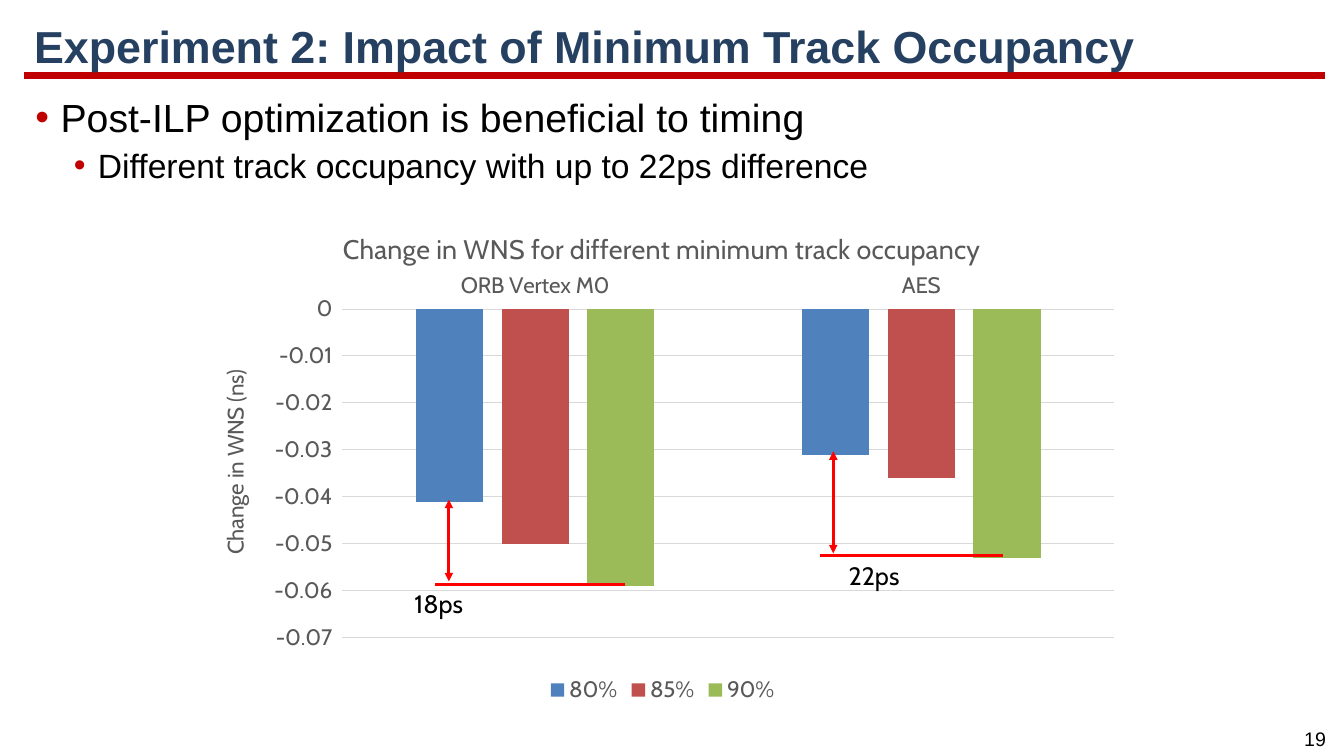
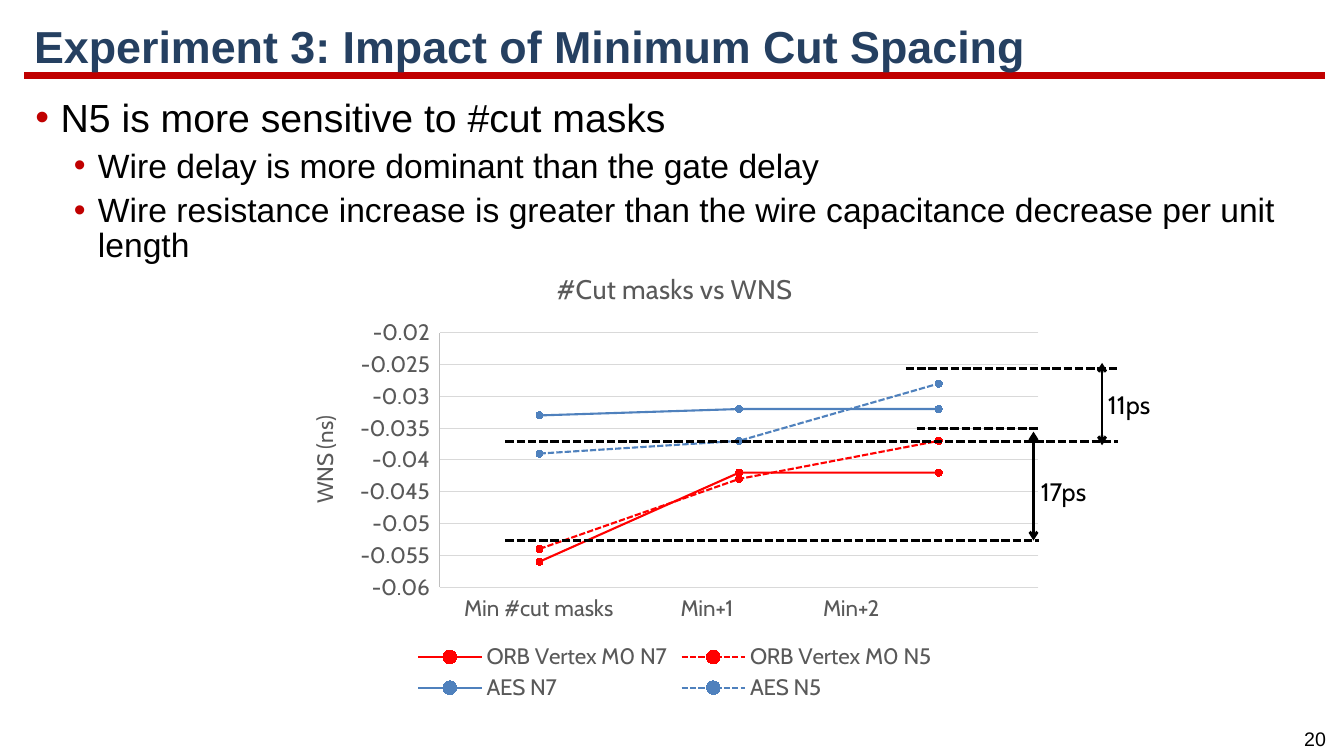
from lxml.etree import SubElement
from pptx import Presentation
from pptx.chart.data import CategoryChartData, XyChartData
from pptx.dml.color import RGBColor as RGB
from pptx.enum.chart import XL_CHART_TYPE as CT, XL_LEGEND_POSITION as LP
from pptx.enum.chart import XL_MARKER_STYLE as MS, XL_TICK_LABEL_POSITION as TL, XL_TICK_MARK as TM
from pptx.enum.dml import MSO_LINE
from pptx.enum.shapes import MSO_CONNECTOR
from pptx.enum.text import MSO_ANCHOR, PP_ALIGN
from pptx.oxml.ns import qn
from pptx.util import Inches, Pt

C = {"navy": "254061", "rule": "C00000", "ink": "000000", "grey": "595959", "grid": "D9D9D9",
     "axis": "BFBFBF", "blue": "4F81BD", "brick": "C0504D", "green": "9BBB59", "red": "FF0000"}
LEVELS = [(28, 0.25, 0.25), (24, 0.62, 0.24)]

prs = Presentation()
prs.slide_width, prs.slide_height = Inches(13.33), Inches(7.5)
COL, ROW = prs.slide_width / 100, prs.slide_height / 100


def text(s, items, x, y, w, h, size=18, font="Cabin", color="ink", bold=False,
         align=PP_ALIGN.LEFT, anchor=MSO_ANCHOR.TOP, spacing=1.0, wrap=True, bullets=False):
    tf = s.shapes.add_textbox(int(x * COL), int(y * ROW), int(w * COL), int(h * ROW)).text_frame
    tf.word_wrap, tf.vertical_anchor = wrap, anchor
    for i, (level, line) in enumerate(items):
        p = tf.paragraphs[0] if i == 0 else tf.add_paragraph()
        p.alignment, p.line_spacing = align, spacing
        if bullets:
            size, left, hang = LEVELS[level]
            p.level = level
            pPr = p._p.get_or_add_pPr()
            pPr.set("marL", str(Inches(left)))
            pPr.set("indent", str(-Inches(hang)))
            if i:
                p.space_before = Pt(size * 0.3)
            SubElement(SubElement(pPr, qn("a:buClr")), qn("a:srgbClr"), val=C["rule"])
            SubElement(pPr, qn("a:buFont"), typeface="Arial")
            SubElement(pPr, qn("a:buChar"), char="•")
        r = p.add_run()
        r.text = line
        r.font.size, r.font.name, r.font.bold = Pt(size), font, bold
        r.font.color.rgb = RGB.from_string(C[color])


def line(s, x1, y1, x2, y2, color="ink", width=2, dash=False, ends=None):
    ln = s.shapes.add_connector(MSO_CONNECTOR.STRAIGHT, int(x1 * COL), int(y1 * ROW),
                                int(x2 * COL), int(y2 * ROW))
    ln.line.color.rgb, ln.line.width = RGB.from_string(C[color]), Pt(width)
    if dash:
        ln.line.dash_style = MSO_LINE.SQUARE_DOT
    spPr = ln._element.spPr
    if ends:
        for tag in ("a:headEnd", "a:tailEnd"):
            SubElement(spPr.find(qn("a:ln")), qn(tag), type=ends)
    SubElement(spPr, qn("a:effectLst"))


occupancy = CategoryChartData(number_format="General")
occupancy.categories = ["ORB Vertex M0", "AES"]
for name, vals in [("80%", (-0.041, -0.031)), ("85%", (-0.05, -0.036)), ("90%", (-0.059, -0.053))]:
    occupancy.add_series(name, vals)

masks = XyChartData(number_format="General")
for name, vals in [("ORB Vertex M0 N7", (-0.056, -0.042, -0.042)),
                   ("ORB Vertex M0 N5", (-0.054, -0.043, -0.037)),
                   ("AES N7", (-0.033, -0.032, -0.032)),
                   ("AES N5", (-0.039, -0.037, -0.028))]:
    series = masks.add_series(name)
    for x, y in enumerate(vals, 1):
        series.add_data_point(x, y)

SLIDES = [
    dict(number=19, title="Experiment 2: Impact of Minimum Track Occupancy",
         body=[(0, "Post-ILP optimization is beneficial to timing"),
               (1, "Different track occupancy with up to 22ps difference")],
         kind=CT.COLUMN_CLUSTERED, data=occupancy, at=(14.25, 27.7, 70.07, 65.9),
         heading="Change in WNS for different minimum track occupancy", unit="Change in WNS (ns)",
         scale=(-0.07, 0, 0.01), plot=(0.16, 0.2, 0.82, 0.66), colors=["blue", "brick", "green"],
         rules=[(61, 73.5, 74.6, 73.5), (32.4, 77.3, 46.5, 77.3)],
         arrows=[(33.4, 66.1, 33.4, 76.9), (62, 59.7, 62, 73.2)],
         accent="red", dash=False, ends="triangle",
         labels=[("18ps", 30.1, 77.2, 18, "ink"), ("22ps", 62.4, 73.5, 18, "ink")]),
    dict(number=20, title="Experiment 3: Impact of Minimum Cut Spacing",
         body=[(0, "N5 is more sensitive to #cut masks"),
               (1, "Wire delay is more dominant than the gate delay"),
               (1, "Wire resistance increase is greater than the wire capacitance "
                   "decrease per unit length")],
         kind=CT.XY_SCATTER_LINES, data=masks, at=(22, 33.2, 56.4, 60.1),
         heading="#Cut masks vs WNS", unit="WNS (ns)",
         scale=(-0.06, -0.02, 0.005), plot=(0.19, 0.18, 0.79, 0.56),
         colors=["red", "red", "blue", "blue"],
         rules=[(37.6, 71.5, 77.3, 71.5), (68.2, 56.7, 77.3, 56.7),
                (37.6, 58.4, 83.2, 58.4), (67.4, 48.7, 83.2, 48.7)],
         arrows=[(76.9, 71.5, 76.9, 57.1), (82, 58.9, 82, 48)],
         accent="ink", dash=True, ends="arrow",
         labels=[("17ps", 76.7, 62.3, 18, "ink"), ("11ps", 81.7, 50.8, 18, "ink"),
                 ("Min #cut masks", 33.8, 77.9, 16, "grey"), ("Min+1", 49.9, 77.9, 16, "grey"),
                 ("Min+2", 60.5, 77.9, 16, "grey")]),
]

for d in SLIDES:
    s = prs.slides.add_slide(prs.slide_layouts[6])
    line(s, 1.8, 10, 98.6, 10, color="rule", width=4.5)
    text(s, [(0, str(d["number"]))], 96.2, 95.5, 3.3, 4.5, size=14, font="Arial",
         align=PP_ALIGN.CENTER, wrap=False)
    text(s, d["body"], 1.9, 12.7, 96.6, 80.7, font="Arial", spacing=0.85, bullets=True)
    text(s, [(0, d["title"])], 1.8, 2.1, 96.8, 8.7, size=32, font="Arial", color="navy",
         bold=True, anchor=MSO_ANCHOR.MIDDLE, spacing=0.9)

    x, y, w, h = d["at"]
    ch = s.shapes.add_chart(d["kind"], int(x * COL), int(y * ROW), int(w * COL), int(h * ROW),
                            d["data"]).chart
    ch.font.size, ch.font.name = Pt(16), "Cabin"
    ch.font.color.rgb = RGB.from_string(C["grey"])
    ch.has_legend = True
    ch.legend.position, ch.legend.include_in_layout = LP.BOTTOM, False
    cat, val = ch.category_axis, ch.value_axis
    val.minimum_scale, val.maximum_scale, val.major_unit = d["scale"]
    val.tick_label_position = TL.LOW
    val.tick_labels.number_format, val.tick_labels.number_format_is_linked = "General", False
    val.has_major_gridlines, cat.has_major_gridlines = True, False
    val.major_gridlines.format.line.color.rgb = RGB.from_string(C["grid"])
    val.major_gridlines.format.line.width = Pt(0.75)
    for axis in (cat, val):
        axis.major_tick_mark = axis.minor_tick_mark = TM.NONE
    for owner, words, size in [(ch, d["heading"], 19.2), (val, d["unit"], 16)]:
        tf = (owner.chart_title if owner is ch else owner.axis_title).text_frame
        tf.text = words
        f = tf.paragraphs[0].runs[0].font
        f.size, f.name, f.bold = Pt(size), "Cabin", False
        f.color.rgb = RGB.from_string(C["grey"])

    area = ch._chartSpace.chart.plotArea
    for old in area.findall(qn("c:layout")):
        area.remove(old)
    layout = SubElement(area, qn("c:layout"))
    area.insert(0, layout)
    manual = SubElement(layout, qn("c:manualLayout"))
    keys = ("layoutTarget", "xMode", "yMode", "x", "y", "w", "h")
    for key, v in zip(keys, ("inner", "edge", "edge", *d["plot"])):
        SubElement(manual, qn("c:" + key), val=str(v))

    plot = ch.plots[0]
    plot.vary_by_categories = False
    if d["kind"] == CT.COLUMN_CLUSTERED:
        plot.gap_width, plot.overlap = 219, -27
        cat.tick_label_position = TL.HIGH
        cat.format.line.color.rgb = RGB.from_string(C["grid"])
        val.format.line.fill.background()
    else:
        cat.minimum_scale, cat.maximum_scale, cat.major_unit = 0.5, 3.5, 1
        cat.visible = False
        val.format.line.color.rgb = RGB.from_string(C["axis"])
    for i, (series, name) in enumerate(zip(plot.series, d["colors"])):
        rgb = RGB.from_string(C[name])
        if d["kind"] == CT.COLUMN_CLUSTERED:
            series.invert_if_negative = False
            series.format.fill.solid()
            series.format.fill.fore_color.rgb = rgb
            continue
        series.smooth = False
        series.format.line.color.rgb, series.format.line.width = rgb, Pt(1.5)
        if i % 2:
            series.format.line.dash_style = MSO_LINE.SQUARE_DOT
        series.marker.style, series.marker.size = MS.CIRCLE, 5
        series.marker.format.fill.solid()
        series.marker.format.fill.fore_color.rgb = rgb
        series.marker.format.line.color.rgb = rgb

    for ends in d["rules"]:
        line(s, *ends, color=d["accent"], dash=d["dash"])
    for ends in d["arrows"]:
        line(s, *ends, color=d["accent"], ends=d["ends"])
    for words, x, y, size, color in d["labels"]:
        text(s, [(0, words)], x, y, 15 if size == 16 else 6, 5.3, size=size, color=color)

prs.save("out.pptx")
